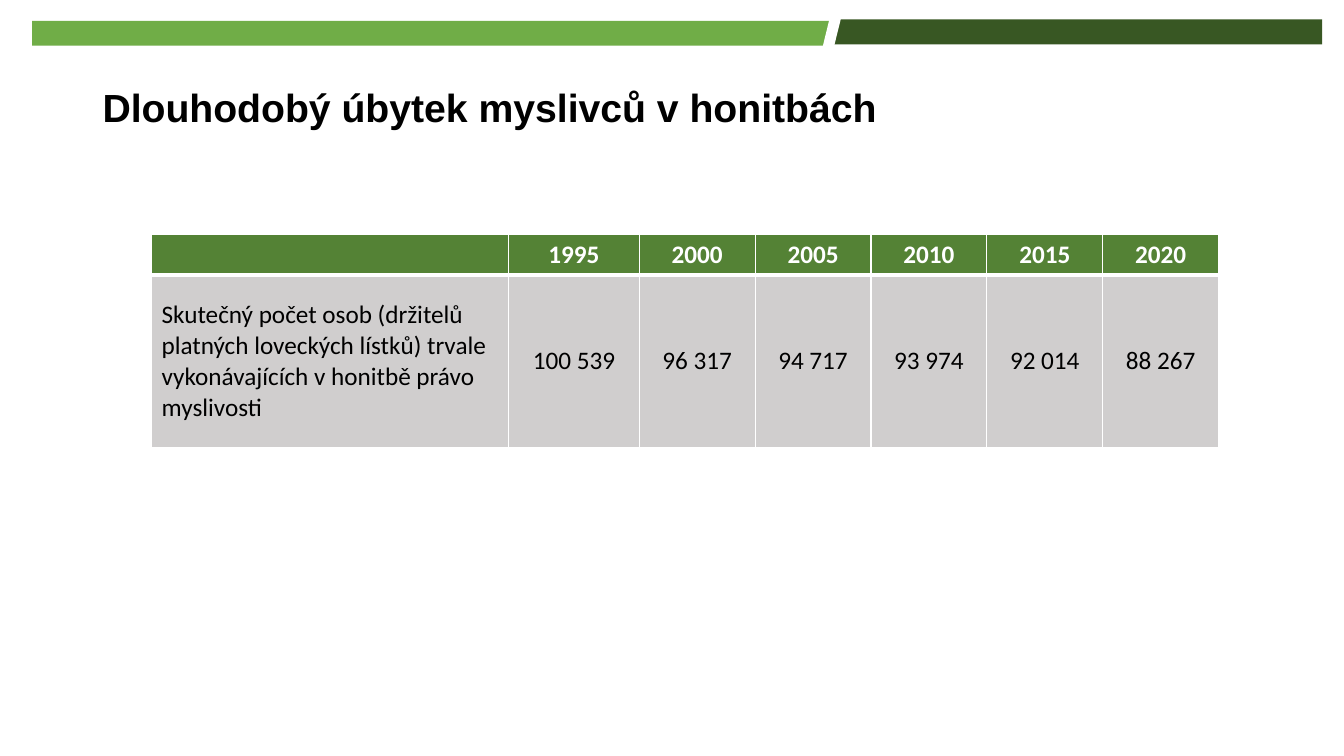
from lxml import etree
from pptx import Presentation
from pptx.dml.color import RGBColor
from pptx.enum.shapes import MSO_SHAPE
from pptx.enum.text import MSO_ANCHOR, MSO_AUTO_SIZE, PP_ALIGN
from pptx.oxml.ns import qn
from pptx.util import Cm, Pt

RECTANGLE, SLANT = MSO_SHAPE.RECTANGLE, MSO_SHAPE.PARALLELOGRAM
TOP, MIDDLE = MSO_ANCHOR.TOP, MSO_ANCHOR.MIDDLE
LEFT, CENTER = PP_ALIGN.LEFT, PP_ALIGN.CENTER
NO_AUTOFIT = MSO_AUTO_SIZE.NONE

WHITE = RGBColor(0xFF, 0xFF, 0xFF)
BLACK = RGBColor(0x00, 0x00, 0x00)
LIGHT_GREEN = RGBColor(0x70, 0xAD, 0x47)
DARK_GREEN = RGBColor(0x38, 0x57, 0x23)
HEADER_GREEN = RGBColor(0x54, 0x82, 0x35)
GREY = RGBColor(0xD0, 0xCE, 0xCE)

HUNTERS = {
    "1995": "100 539",
    "2000": "96 317",
    "2005": "94 717",
    "2010": "93 974",
    "2015": "92 014",
    "2020": "88 267",
}
ROW_LABEL = ("Skutečný počet osob (držitelů platných loveckých lístků) "
             "trvale vykonávajících v honitbě právo myslivosti")


def add_text(para, text, font_name, size, color, bold):
    span = para.add_run()
    span.text = text
    span.font.name = font_name
    span.font.size = Pt(size)
    span.font.bold = bold
    span.font.color.rgb = color


def add_border(cell, side, points):
    """Draw a white line on one side (L, R, T or B); call before filling the cell."""
    properties = cell._tc.get_or_add_tcPr()
    line = etree.SubElement(properties, qn(f"a:ln{side}"), w=str(Pt(points)))
    fill = etree.SubElement(line, qn("a:solidFill"))
    etree.SubElement(fill, qn("a:srgbClr"), val=str(WHITE))


deck = Presentation()
deck.slide_width, deck.slide_height = Cm(33.87), Cm(19.05)
page = deck.slides.add_slide(deck.slide_layouts[5])

# Header band
for kind, left, top, width, height, color in (
    (RECTANGLE, 0.81, 0.53, 20.17, 0.62, LIGHT_GREEN),
    (RECTANGLE, 20.96, 0.49, 12.36, 0.63, DARK_GREEN),
    (SLANT, 20.73, 0.48, 0.46, 0.71, WHITE),
):
    band = page.shapes.add_shape(kind, Cm(left), Cm(top), Cm(width), Cm(height))
    band.shadow.inherit = False
    band.fill.solid()
    band.fill.fore_color.rgb = color
    band.line.fill.background()
    if kind == SLANT:
        band.adjustments[0] = 0.38

# Title
title = page.shapes.title
title.left, title.top, title.width, title.height = Cm(2.33), Cm(1.63), Cm(29.21), Cm(2.28)
title.text_frame.auto_size = NO_AUTOFIT
title.text_frame.word_wrap = True
title.text_frame.vertical_anchor = MIDDLE
para = title.text_frame.paragraphs[0]
para.alignment = LEFT
para.line_spacing = 0.9
add_text(para, "Dlouhodobý úbytek myslivců v honitbách", "Arial", 28, BLACK, True)

# Table of hunters by year
rows = [["", *HUNTERS], [ROW_LABEL, *HUNTERS.values()]]
column_widths = [9.0, 3.29] + [2.92] * 5
row_heights = [1.03, 4.35]
table = page.shapes.add_table(
    len(rows), len(column_widths), Cm(3.82), Cm(5.9),
    Cm(sum(column_widths)), Cm(sum(row_heights)),
).table
for column, width in zip(table.columns, column_widths):
    column.width = Cm(width)
for row, height in zip(table.rows, row_heights):
    row.height = Cm(height)

for row_index, texts in enumerate(rows):
    is_header = row_index == 0
    for column_index, text in enumerate(texts):
        cell = table.cell(row_index, column_index)
        add_border(cell, "L", 1)
        add_border(cell, "R", 1)
        add_border(cell, "T", 1 if is_header else 3)
        add_border(cell, "B", 3 if is_header else 1)
        cell.fill.solid()
        cell.fill.fore_color.rgb = HEADER_GREEN if is_header else GREY
        cell.vertical_anchor = TOP if is_header else MIDDLE
        para = cell.text_frame.paragraphs[0]
        para.alignment = CENTER if column_index else LEFT
        if text:
            add_text(para, text, "Calibri", 18, WHITE if is_header else BLACK, is_header)

deck.save("out.pptx")
